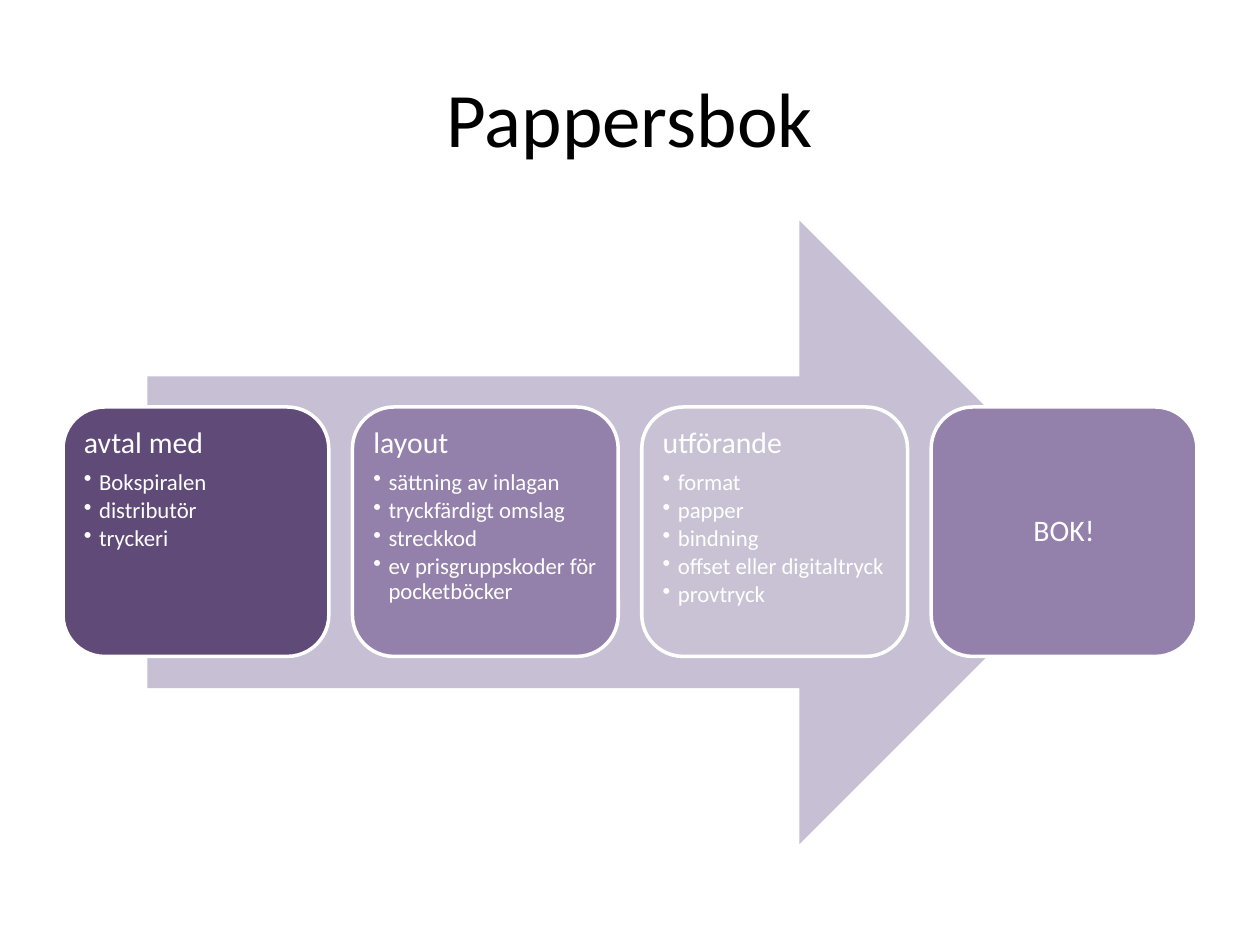
from lxml.etree import SubElement
from pptx import Presentation
from pptx.dml.color import RGBColor
from pptx.enum.shapes import MSO_SHAPE
from pptx.enum.text import MSO_ANCHOR, PP_ALIGN
from pptx.oxml.ns import qn
from pptx.util import Inches, Pt

COLORS = {
    "text": "000000",
    "white": "FFFFFF",
    "arrow": "C7BFD3",
    "dark": "5F4A78",
    "medium": "9380AB",
    "light": "C9C2D4",
}
STEPS = [
    ("avtal med", "dark", ["Bokspiralen", "distributör", "tryckeri"]),
    ("layout", "medium", ["sättning av inlagan", "tryckfärdigt omslag", "streckkod",
                          "ev prisgruppskoder för pocketböcker"]),
    ("utförande", "light", ["format", "papper", "bindning",
                            "offset eller digitaltryck", "provtryck"]),
    ("BOK!", "medium", []),
]
STEP_LEFT, STEP_TOP, STEP_WIDTH, STEP_HEIGHT = 0.5, 3.23, 2.11, 1.98
STEP_PITCH = (9 - STEP_WIDTH) / (len(STEPS) - 1)
HEADING = {"line_spacing": 0.9, "space_after": Pt(6)}
BULLET = {"line_spacing": 0.9, "space_after": Pt(2), "level": 1, "alignment": PP_ALIGN.LEFT}
INSETS = {f"margin_{side}": Inches(0.07) for side in ("left", "top", "right", "bottom")}


def rgb(name):
    """Return the named colour."""
    return RGBColor.from_string(COLORS[name])


def apply_format(target, values):
    """Set each attribute of the target from a dict."""
    for attribute, value in values.items():
        setattr(target, attribute, value)


def write_text(paragraph, text, size, color, values):
    """Fill a paragraph and format it."""
    paragraph.text = text
    apply_format(paragraph, values)
    apply_format(paragraph.font, {"size": Pt(size), "name": "Calibri"})
    paragraph.font.color.rgb = rgb(color)


def add_bullet(paragraph):
    """Give a paragraph a hanging bullet."""
    properties = paragraph._p.get_or_add_pPr()
    properties.set("marL", str(Inches(0.12)))
    properties.set("indent", str(-Inches(0.12)))
    SubElement(properties, qn("a:buChar"), char="•")


def add_filled(slide, preset, box, color):
    """Add a flat preset shape without an outline."""
    filled = slide.shapes.add_shape(preset, *map(Inches, box))
    filled.shadow.inherit = False
    filled.fill.solid()
    filled.fill.fore_color.rgb = rgb(color)
    filled.line.fill.background()
    return filled


def add_title(slide, text):
    """Place and format the slide title."""
    title = slide.shapes.title
    apply_format(title, {"left": Inches(0.5), "top": Inches(0.3),
                         "width": Inches(9), "height": Inches(1.25)})
    title.text_frame.vertical_anchor = MSO_ANCHOR.MIDDLE
    write_text(title.text_frame.paragraphs[0], text, 44, "text",
               {"alignment": PP_ALIGN.CENTER})


def add_step(slide, left, heading, color, items):
    """Add a rounded step with its heading and bullets."""
    step = add_filled(slide, MSO_SHAPE.ROUNDED_RECTANGLE,
                      (left, STEP_TOP, STEP_WIDTH, STEP_HEIGHT), color)
    step.line.color.rgb = rgb("white")
    step.line.width = Pt(2)
    frame = step.text_frame
    anchor = MSO_ANCHOR.TOP if items else MSO_ANCHOR.MIDDLE
    apply_format(frame, {**INSETS, "word_wrap": True, "vertical_anchor": anchor})
    alignment = PP_ALIGN.LEFT if items else PP_ALIGN.CENTER
    write_text(frame.paragraphs[0], heading, 17, "white",
               {**HEADING, "alignment": alignment})
    for item in items:
        paragraph = frame.add_paragraph()
        add_bullet(paragraph)
        write_text(paragraph, item, 13, "white", BULLET)


def main():
    """Build the slide and save it."""
    deck = Presentation()
    apply_format(deck, {"slide_width": Inches(10), "slide_height": Inches(7.5)})
    slide = deck.slides.add_slide(deck.slide_layouts[5])
    add_title(slide, "Pappersbok")
    add_filled(slide, MSO_SHAPE.RIGHT_ARROW, (1.17, 1.75, 7.65, 4.95), "arrow")
    for index, (heading, color, items) in enumerate(STEPS):
        add_step(slide, STEP_LEFT + index * STEP_PITCH, heading, color, items)
    deck.save("out.pptx")


if __name__ == "__main__":
    main()
